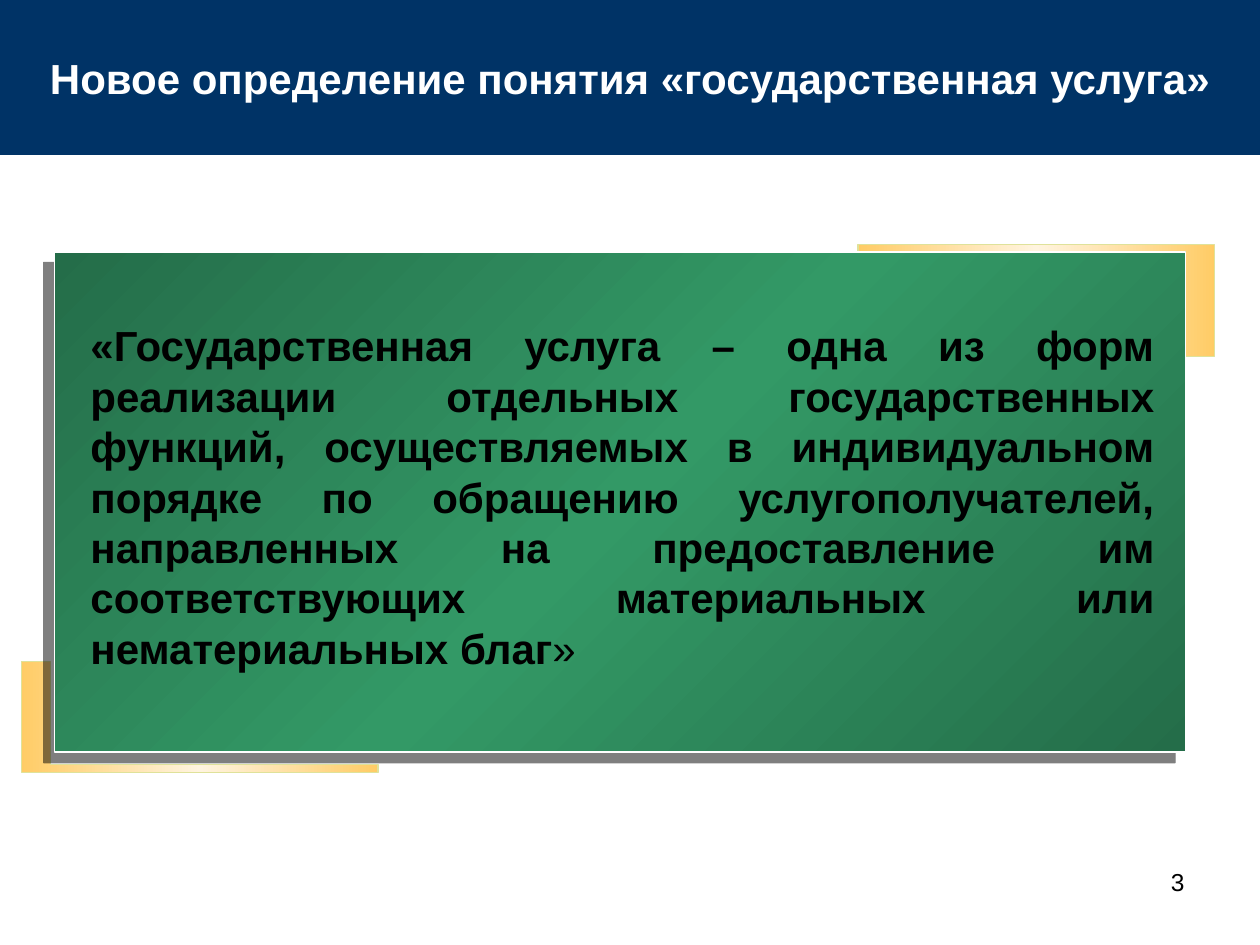
from dataclasses import dataclass

from lxml import etree
from pptx import Presentation
from pptx import util as u
from pptx.dml.color import RGBColor
from pptx.enum import shapes, text
from pptx.oxml import ns


@dataclass(frozen=True)
class Theme:
    font: str = "Arial"
    navy: str = "003366"
    white: str = "FFFFFF"
    black: str = "000000"
    gold: str = "FFCC66"
    cream: str = "FFF4DF"
    gold_edge: str = "DFE29A"
    dark_green: str = "246D49"
    green: str = "339966"
    heading_size: int = 24
    number_size: int = 14


THEME = Theme()


@dataclass(frozen=True)
class Box:
    left: float
    top: float
    width: float
    height: float

    def lengths(self):
        return [u.Inches(v) for v in (self.left, self.top, self.width, self.height)]


def add_run(paragraph, wording, size, color, bold=False):
    run = paragraph.add_run()
    run.text = wording
    run.font.name = THEME.font
    run.font.size = u.Pt(size)
    run.font.bold = bold
    run.font.color.rgb = RGBColor.from_string(color)


def add_element(parent, tag, **attributes):
    return etree.SubElement(parent, ns.qn(tag), attributes)


def fill_mirrored(shape, edge, middle, angle):
    shape.fill.gradient()
    gradient = shape.fill._xPr.find(ns.qn("a:gradFill"))
    for child in list(gradient):
        gradient.remove(child)
    stops = add_element(gradient, "a:gsLst")
    for percent, color in ((0, edge), (50, middle), (100, edge)):
        stop = add_element(stops, "a:gs", pos=str(percent * 1000))
        add_element(stop, "a:srgbClr", val=color)
    add_element(gradient, "a:lin", ang=str(angle * 60000), scaled="0")


def set_outline(shape, color, width):
    shape.line.color.rgb = RGBColor.from_string(color)
    shape.line.width = u.Pt(width)


def cast_shadow(shape, distance, direction, opacity):
    shape.shadow.inherit = False
    effects = shape._element.spPr.find(ns.qn("a:effectLst"))
    shadow = add_element(effects, "a:outerShdw", blurRad="0", dist=str(u.Pt(distance)),
                         dir=str(direction * 60000), algn="ctr", rotWithShape="0")
    tint = add_element(shadow, "a:srgbClr", val=THEME.black)
    add_element(tint, "a:alpha", val=str(opacity * 1000))


def add_title(slide, box, wording):
    title = slide.shapes.title
    title.left, title.top, title.width, title.height = box.lengths()
    title.fill.solid()
    title.fill.fore_color.rgb = RGBColor.from_string(THEME.navy)
    frame = title.text_frame
    frame.auto_size = text.MSO_AUTO_SIZE.NONE
    frame.word_wrap = False
    frame.vertical_anchor = text.MSO_ANCHOR.MIDDLE
    paragraph = frame.paragraphs[0]
    paragraph.alignment = text.PP_ALIGN.CENTER
    indents = paragraph._p.get_or_add_pPr()
    indents.set("marL", str(u.Inches(0.38)))
    indents.set("indent", str(u.Inches(-0.38)))
    add_run(paragraph, wording, THEME.heading_size, THEME.white, bold=True)


def add_corner(slide, box, rotation=0):
    stem, foot = 0.23, 0.06
    right, bottom = box.left + box.width, box.top + box.height
    inner_left, inner_bottom = box.left + stem, bottom - foot
    outline = [(inner_left, inner_bottom), (inner_left, box.top), (box.left, box.top),
               (box.left, bottom), (right, bottom), (right, inner_bottom)]
    points = [(u.Inches(x), u.Inches(y)) for x, y in outline]
    builder = slide.shapes.build_freeform(*points[0])
    builder.add_line_segments(points[1:], close=True)
    corner = builder.convert_to_shape()
    corner.rotation = rotation
    corner.shadow.inherit = False
    fill_mirrored(corner, THEME.gold, THEME.cream, 0)
    set_outline(corner, THEME.gold_edge, 0)


def add_panel(slide, box):
    panel = slide.shapes.add_shape(shapes.MSO_SHAPE.RECTANGLE, *box.lengths())
    fill_mirrored(panel, THEME.dark_green, THEME.green, 45)
    set_outline(panel, THEME.white, 0.75)
    cast_shadow(panel, distance=8.5, direction=135, opacity=50)


def add_definition(slide, box, wording, closing_quote):
    frame = slide.shapes.add_textbox(*box.lengths()).text_frame
    frame.word_wrap = True
    frame.auto_size = text.MSO_AUTO_SIZE.SHAPE_TO_FIT_TEXT
    paragraph = frame.paragraphs[0]
    paragraph.alignment = text.PP_ALIGN.JUSTIFY
    add_run(paragraph, wording, THEME.heading_size, THEME.black, bold=True)
    add_run(paragraph, closing_quote, THEME.heading_size, THEME.black)


def add_page_number(slide, box, number):
    frame = slide.shapes.add_textbox(*box.lengths()).text_frame
    frame.word_wrap = True
    paragraph = frame.paragraphs[0]
    paragraph.alignment = text.PP_ALIGN.RIGHT
    add_run(paragraph, number, THEME.number_size, THEME.black)


def build_definition_slide(deck):
    slide = deck.slides.add_slide(deck.slide_layouts.get_by_name("Title Only"))
    add_corner(slide, Box(0.17, 5.25, 2.83, 0.88))
    add_corner(slide, Box(6.81, 1.94, 2.83, 0.89), rotation=180)
    add_panel(slide, Box(0.43, 2, 8.98, 3.97))
    add_page_number(slide, Box(7.17, 6.83, 2.33, 0.52), "3")
    add_title(slide, Box(0, 0, 10, 1.23),
              "Новое определение понятия «государственная услуга»")
    add_definition(
        slide, Box(0.62, 2.49, 8.64, 2.9),
        "«Государственная услуга – одна из форм реализации отдельных "
        "государственных функций, осуществляемых в индивидуальном порядке "
        "по обращению услугополучателей, направленных на предоставление им "
        "соответствующих материальных или нематериальных благ",
        "»")


def main():
    deck = Presentation()
    deck.slide_width, deck.slide_height = u.Inches(10), u.Inches(7.5)
    build_definition_slide(deck)
    deck.save("out.pptx")


if __name__ == "__main__":
    main()
